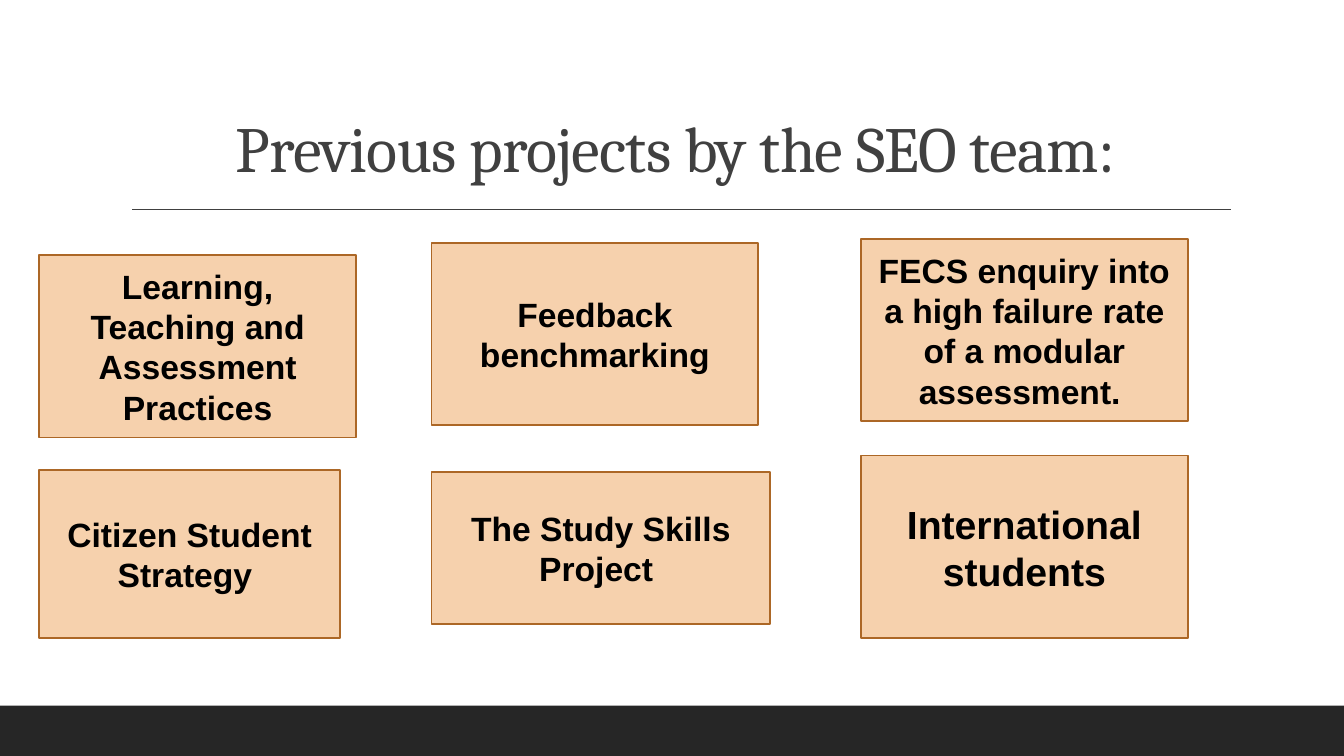
from pptx import Presentation
from pptx.dml.color import RGBColor
from pptx.enum.shapes import MSO_CONNECTOR, MSO_SHAPE
from pptx.enum.text import MSO_ANCHOR, MSO_AUTO_SIZE, PP_ALIGN
from pptx.oxml.ns import qn
from pptx.util import Inches, Pt
from lxml.etree import SubElement

TITLE = "Previous projects by the SEO team:"
COLUMNS = [0.39, 4.28, 8.54]
# Each project: column, top, width, height, text size, text
PROJECTS = [
    (0, 2.53, 3.14, 1.81, 24, "Learning, Teaching and Assessment Practices"),
    (1, 2.41, 3.24, 1.81, 24, "Feedback benchmarking"),
    (0, 4.66, 2.98, 1.67, 24, "Citizen Student Strategy "),
    (1, 4.68, 3.36, 1.51, 24, "The Study Skills Project "),
    (2, 2.37, 3.24, 1.81, 24,
     "FECS enquiry into a high failure rate of a modular assessment. "),
    (2, 4.52, 3.24, 1.81, 28, "International students"),
]
COLORS = {
    "footer": "262626",
    "title": "404040",
    "box": "F6D1AD",
    "border": "AC6726",
    "text": "000000",
}
WIDTH, HEIGHT, FOOTER = 13.33, 7.5, 0.5


def color(name):
    return RGBColor.from_string(COLORS[name])


def add_box(slide, left, top, width, height, fill):
    sp = slide.shapes.add_shape(
        MSO_SHAPE.RECTANGLE, *map(Inches, (left, top, width, height)))
    sp.shadow.inherit = False
    sp.fill.solid()
    sp.fill.fore_color.rgb = color(fill)
    sp.line.fill.background()
    return sp


def write(tf, text, font, size, ink, anchor):
    tf.word_wrap = True
    tf.auto_size = MSO_AUTO_SIZE.NONE
    tf.vertical_anchor = anchor
    p = tf.paragraphs[0]
    p.alignment = PP_ALIGN.CENTER
    r = p.add_run()
    r.text = text
    r.font.name = font
    r.font.size = Pt(size)
    r.font.color.rgb = color(ink)
    return p, r


def add_title(slide):
    sp = slide.shapes.title
    sp.left, sp.top, sp.width, sp.height = map(Inches, (1.2, 0.31, 11, 1.59))
    p, r = write(sp.text_frame, TITLE, "Cambria", 46, "title", MSO_ANCHOR.BOTTOM)
    p.line_spacing = 0.9
    r.font._element.set("spc", "-50")


def add_rule(slide):
    line = slide.shapes.add_connector(
        MSO_CONNECTOR.STRAIGHT, *map(Inches, (1.31, 2.08, 12.21, 2.08)))
    line.line.color.rgb = color("title")
    line.line.width = Pt(1)
    SubElement(line._element.spPr, qn("a:effectLst"))


def add_project(slide, column, top, width, height, size, text):
    sp = add_box(slide, COLUMNS[column], top, width, height, "box")
    sp.line.color.rgb = color("border")
    sp.line.width = Pt(1.25)
    _, r = write(sp.text_frame, text, "Arial", size, "text", MSO_ANCHOR.MIDDLE)
    r.font.bold = True


def main():
    prs = Presentation()
    prs.slide_width, prs.slide_height = Inches(WIDTH), Inches(HEIGHT)
    slide = prs.slides.add_slide(prs.slide_layouts.get_by_name("Title Only"))
    add_box(slide, 0, HEIGHT - FOOTER, WIDTH, FOOTER, "footer")
    add_rule(slide)
    add_title(slide)
    for project in PROJECTS:
        add_project(slide, *project)
    prs.save("out.pptx")


if __name__ == "__main__":
    main()
